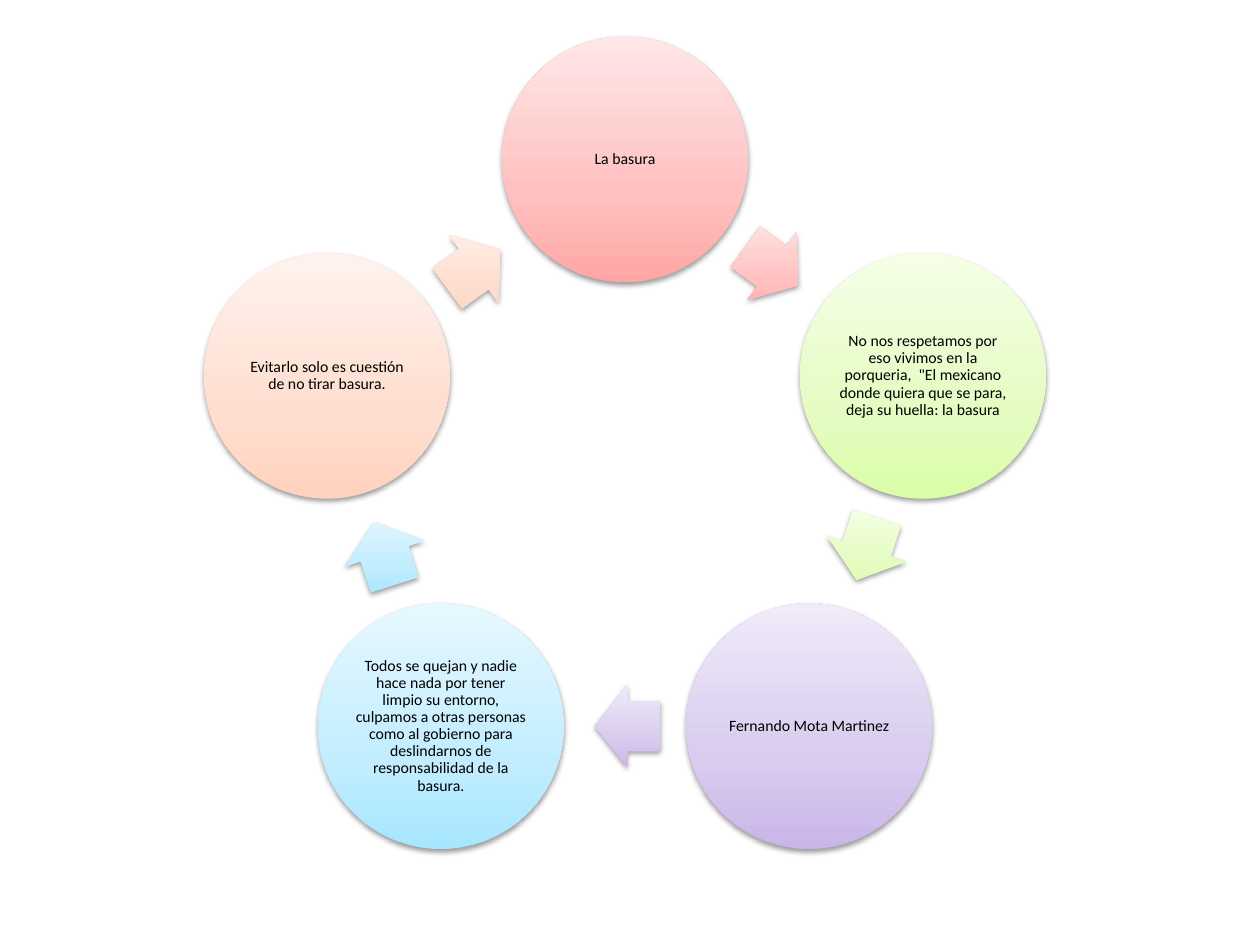
from copy import deepcopy
from math import cos, radians, sin

from lxml.etree import SubElement
from pptx import Presentation
from pptx.dml.color import RGBColor
from pptx.enum.shapes import MSO_SHAPE
from pptx.enum.text import MSO_ANCHOR, PP_ALIGN
from pptx.oxml.ns import qn
from pptx.util import Inches, Pt

STEPS = [
    ("La basura", ("FFA6A5", "FFC0BF", "FFE7E7")),
    ('No nos respetamos por eso vivimos en la porqueria,  "El mexicano '
     'donde quiera que se para, deja su huella: la basura',
     ("DAFDA7", "E4FCC2", "F5FFE7")),
    ("Fernando Mota Martinez", ("C9B5E8", "D8CBEE", "F0EAF9")),
    ("Todos se quejan y nadie hace nada por tener limpio su entorno, "
     "culpamos a otras personas como al gobierno para deslindarnos de "
     "responsabilidad de la basura.", ("A7E6FF", "C1EDFF", "E7F8FF")),
    ("Evitarlo solo es cuestión de no tirar basura.",
     ("FFD2BD", "FFDED0", "FFF2ED")),
]
DISC = 1.95
ARROW = (0.52, 0.66)
LAG = 0.02  # arrows sit slightly before the midpoint between discs


def color(code):
    return RGBColor.from_string(code)


def shade(shape, codes):
    """Fill from bottom to top, whatever the rotation of the shape."""
    fill = shape.fill
    fill.gradient()
    fill.gradient_angle = 90
    grad = shape.element.spPr.find(qn("a:gradFill"))
    grad.set("rotWithShape", "0")
    stops = grad.find(qn("a:gsLst"))
    stops.append(deepcopy(stops[-1]))
    for stop, code, spot in zip(fill.gradient_stops, codes, (0, 0.35, 1)):
        stop.color.rgb = color(code)
        stop.position = spot


def drop_shadow(shape):
    shape.shadow.inherit = False
    effects = shape.element.spPr.find(qn("a:effectLst"))
    outer = SubElement(effects, qn("a:outerShdw"), blurRad=str(Pt(3.1)),
                       dist=str(Pt(1.6)), dir="5400000", rotWithShape="0")
    tone = SubElement(outer, qn("a:srgbClr"), val="000000")
    SubElement(tone, qn("a:alpha"), val="38000")


def add_part(slide, kind, mid, size, codes):
    (x, y), (wide, high) = mid, size
    shape = slide.shapes.add_shape(
        kind, Inches(x - wide / 2), Inches(y - high / 2),
        Inches(wide), Inches(high))
    shape.line.fill.background()
    shade(shape, codes)
    drop_shadow(shape)
    return shape


def add_disc(slide, mid, text, codes):
    disc = add_part(slide, MSO_SHAPE.OVAL, mid, (DISC, DISC), codes)
    frame = disc.text_frame
    frame.word_wrap = True
    frame.vertical_anchor = MSO_ANCHOR.MIDDLE
    frame.margin_left = frame.margin_right = Inches(0.01)
    frame.margin_top = frame.margin_bottom = Inches(0.01)
    para = frame.paragraphs[0]
    para.text = text
    para.alignment = PP_ALIGN.CENTER
    para.line_spacing = 0.9
    para.font.name = "Calibri"
    para.font.size = Pt(9)
    para.font.color.rgb = color("000000")


def add_arrow(slide, mid, turn, codes):
    arrow = add_part(slide, MSO_SHAPE.RIGHT_ARROW, mid, ARROW, codes)
    arrow.adjustments[0] = 0.6
    arrow.adjustments[1] = 0.5
    arrow.rotation = turn


def add_cycle(slide, left, top, wide, high, steps):
    """Place the steps clockwise from the top of the box."""
    ring = (wide - DISC) / 2 / sin(radians(72))
    hub = left + wide / 2, top + DISC / 2 + ring
    pitch = 360 / len(steps)

    def spot(turn, reach):
        angle = radians(turn)
        return hub[0] + reach * sin(angle), hub[1] - reach * cos(angle)

    for i, (text, codes) in enumerate(steps):
        add_disc(slide, spot(i * pitch, ring), text, codes)
        turn = (i + 0.5) * pitch
        x, y = spot(turn, ring * cos(radians(pitch / 2)))
        mid = x - LAG * cos(radians(turn)), y - LAG * sin(radians(turn))
        add_arrow(slide, mid, turn, codes)


def main():
    deck = Presentation()
    deck.slide_width, deck.slide_height = Inches(10), Inches(7.5)
    slide = deck.slides.add_slide(deck.slide_layouts[6])
    add_cycle(slide, 1.62, 0.29, 6.68, 6.45, STEPS)
    deck.save("out.pptx")


if __name__ == "__main__":
    main()
